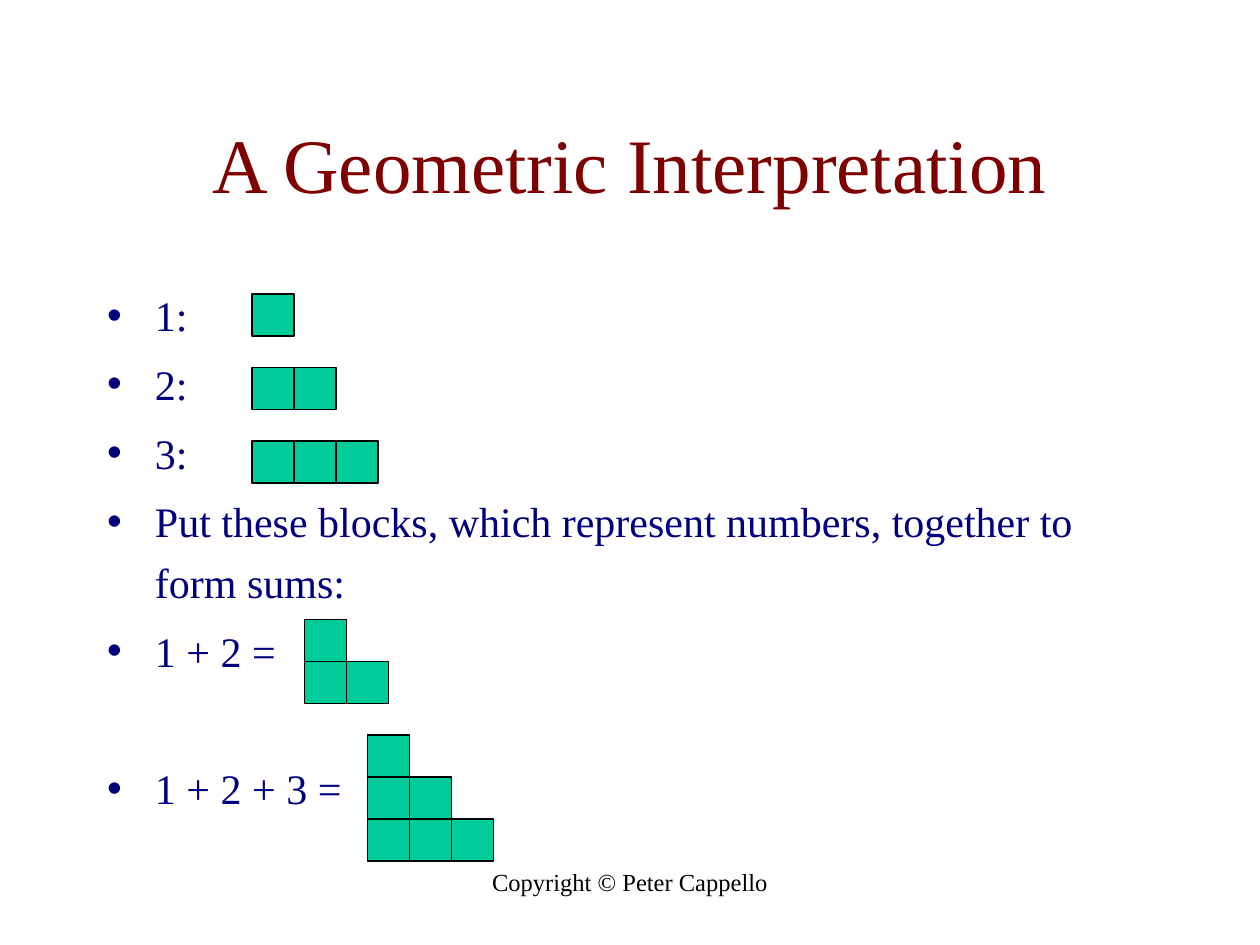
"""Build a slide that shows sums of integers as stacks of square blocks."""
from dataclasses import dataclass

from lxml import etree
from pptx import Presentation
from pptx.dml.color import RGBColor
from pptx.enum.shapes import MSO_SHAPE
from pptx.enum.text import MSO_ANCHOR, MSO_AUTO_SIZE, PP_ALIGN
from pptx.oxml.ns import qn
from pptx.util import Inches, Pt

RECT = MSO_SHAPE.RECTANGLE
TOP, MIDDLE = MSO_ANCHOR.TOP, MSO_ANCHOR.MIDDLE
LEFT, CENTER = PP_ALIGN.LEFT, PP_ALIGN.CENTER
NO_FIT = MSO_AUTO_SIZE.NONE

COLORS = {"title": "7F0000", "body": "00007F", "block": "00CC99", "ink": "000000"}
FONT = "Times New Roman"
COLS, ROWS = 120, 90
UNIT = Inches(10) // COLS
BLOCK = 4
GAP = 4.8
WIDE_GAP = 44


@dataclass
class Stack:
    """Rows of blocks, top down, with the corner in grid units."""
    col: int
    row: int
    counts: tuple[int, ...]


@dataclass
class Item:
    """A bullet and the space before it in points."""
    text: str
    before: float = GAP


STACKS = [
    Stack(24, 28, (1,)),
    Stack(24, 35, (2,)),
    Stack(24, 42, (3,)),
    Stack(29, 59, (1, 2)),
    Stack(35, 70, (1, 2, 3)),
]
ITEMS = [
    Item("1:"),
    Item("2:"),
    Item("3:"),
    Item("Put these blocks, which represent numbers, together to form sums:"),
    Item("1 + 2 ="),
    Item("1 + 2 + 3 =", WIDE_GAP),
]


def rgb(name: str) -> RGBColor:
    """Look up a colour by its role."""
    return RGBColor.from_string(COLORS[name])


def place(sp, col: int, row: int, width: int, height: int) -> None:
    """Set a shape's frame in grid units."""
    sp.left, sp.top = col * UNIT, row * UNIT
    sp.width, sp.height = width * UNIT, height * UNIT


def write(p, text: str, *, size: int, color: str, align=LEFT) -> None:
    """Add a formatted run to a paragraph."""
    p.alignment = align
    r = p.add_run()
    r.text = text
    r.font.name, r.font.size = FONT, Pt(size)
    r.font.color.rgb = rgb(color)


def frame(sp, anchor):
    """Prepare a text frame and return it."""
    tf = sp.text_frame
    tf.word_wrap, tf.auto_size = True, NO_FIT
    tf.vertical_anchor = anchor
    return tf


def add_bullet(p, item: Item) -> None:
    """Format a paragraph as a spaced bullet with a hanging indent."""
    p.line_spacing, p.space_before = 1.2, Pt(item.before)
    write(p, item.text, size=24, color="body")
    pPr = p._p.get_or_add_pPr()
    pPr.set("marL", str(Inches(0.38)))
    pPr.set("indent", str(-Inches(0.38)))
    etree.SubElement(pPr, qn("a:buChar")).set("char", "•")


def draw_stack(s, stack: Stack) -> None:
    """Draw left-aligned rows of blocks."""
    for i, count in enumerate(stack.counts):
        for j in range(count):
            sp = s.shapes.add_shape(RECT, 0, 0, 0, 0)
            place(sp, stack.col + j * BLOCK, stack.row + i * BLOCK, BLOCK, BLOCK)
            sp.shadow.inherit = False
            sp.fill.solid()
            sp.fill.fore_color.rgb = rgb("block")
            sp.line.color.rgb = rgb("ink")
            sp.line.width = Pt(0.75)


def main() -> None:
    """Build and save the slide."""
    prs = Presentation()
    prs.slide_width, prs.slide_height = COLS * UNIT, ROWS * UNIT
    s = prs.slides.add_slide(prs.slide_layouts[1])

    title, body = s.shapes.title, s.placeholders[1]
    place(title, 9, 8, 102, 15)
    write(frame(title, MIDDLE).paragraphs[0], "A Geometric Interpretation",
          size=44, color="title", align=CENTER)

    place(body, 9, 26, 102, 54)
    tf = frame(body, TOP)
    for i, item in enumerate(ITEMS):
        add_bullet(tf.add_paragraph() if i else tf.paragraphs[0], item)

    footer = s.shapes.add_textbox(0, 0, 0, 0)
    place(footer, 41, 82, 38, 6)
    write(frame(footer, TOP).paragraphs[0], "Copyright © Peter Cappello",
          size=14, color="ink", align=CENTER)

    for stack in STACKS:
        draw_stack(s, stack)
    prs.save("out.pptx")


if __name__ == "__main__":
    main()
